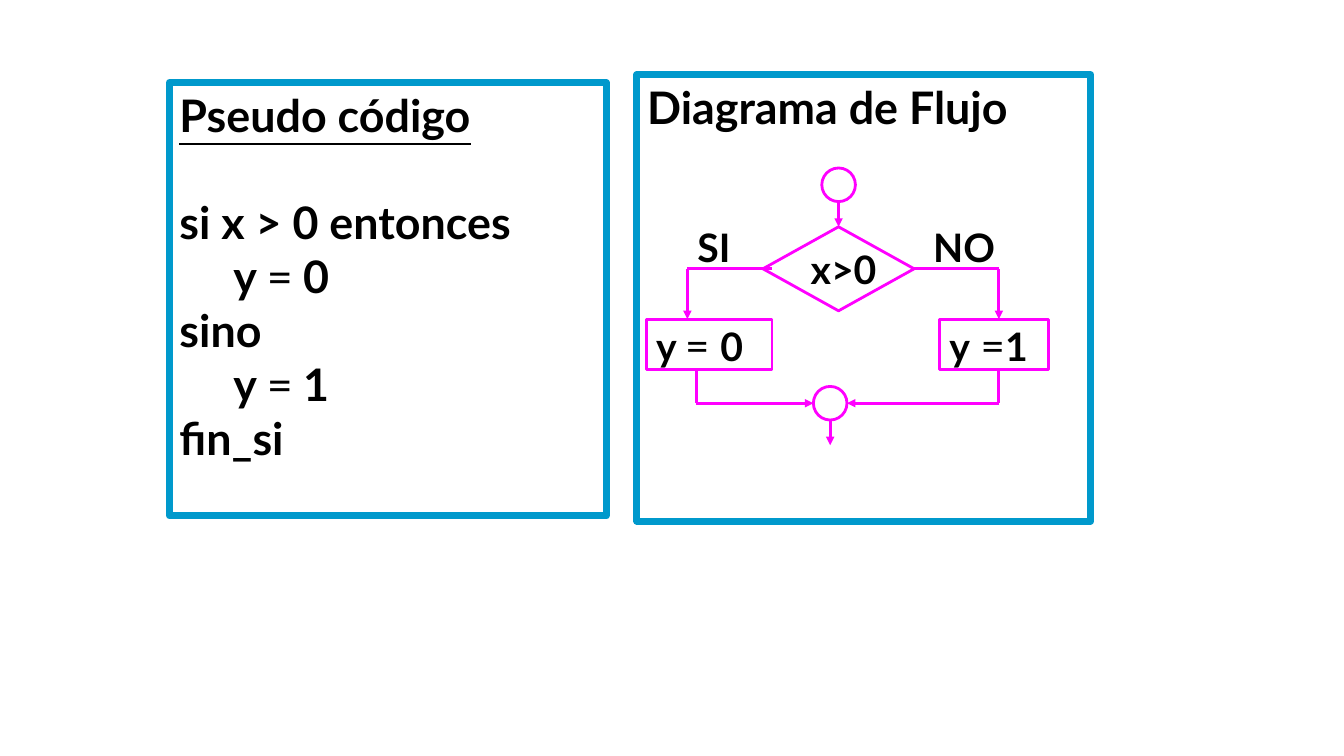
from lxml import etree
from pptx import Presentation
from pptx import util as u
from pptx.dml.color import RGBColor
from pptx.enum import shapes, text
from pptx.oxml.ns import qn

Kind = shapes.MSO_SHAPE


def paint(fmt, hue):
    if hue is None:
        fmt.background()
    else:
        fmt.solid()
        fmt.fore_color.rgb = RGBColor.from_string(hue)


def write(para, runs, size=28, font="Lato", hue="000000", under=False):
    if isinstance(runs, str):
        runs = [(runs,)]
    para.alignment = text.PP_ALIGN.LEFT
    para.line_spacing = 1.0
    para.space_before = u.Pt(0)
    for words, *rest in runs:
        run = para.add_run()
        run.text = words
        run.font.name = font
        run.font.size = u.Pt(rest[0] if rest else size)
        run.font.bold = rest[1] if len(rest) > 1 else True
        run.font.underline = under
        paint(run.font.fill, hue)


class Chart:
    ink = "FF00FF"
    edge = "0099CC"

    def __init__(self, slide):
        self.slide = slide

    def stroke(self, line, hue, width):
        paint(line.fill, hue)
        line.width = u.Pt(width)

    def frame(self, shape, anchor, wrap=True):
        frame = shape.text_frame
        frame.auto_size = text.MSO_AUTO_SIZE.NONE
        frame.vertical_anchor = anchor
        frame.word_wrap = wrap
        return frame

    def panel(self, holder, left, top, width, height):
        holder.left, holder.top = u.Pt(left), u.Pt(top)
        holder.width, holder.height = u.Pt(width), u.Pt(height)
        paint(holder.fill, None)
        self.stroke(holder.line, self.edge, 5)
        return self.frame(holder, text.MSO_ANCHOR.TOP)

    def node(self, kind, left, top, width, height, runs=None, wrap=True):
        shape = self.slide.shapes.add_shape(
            kind, u.Pt(left), u.Pt(top), u.Pt(width), u.Pt(height))
        shape.shadow.inherit = False
        paint(shape.fill, None)
        self.stroke(shape.line, self.ink, 2)
        if runs:
            frame = self.frame(shape, text.MSO_ANCHOR.MIDDLE, wrap)
            write(frame.paragraphs[0], runs)
        return shape

    def label(self, left, top, width, height, words):
        box = self.slide.shapes.add_textbox(
            u.Pt(left), u.Pt(top), u.Pt(width), u.Pt(height))
        frame = self.frame(box, text.MSO_ANCHOR.TOP)
        write(frame.paragraphs[0], words)

    def link(self, start, end, arrow=False):
        line = self.slide.shapes.add_connector(
            shapes.MSO_CONNECTOR.STRAIGHT, *map(u.Pt, start + end))
        self.stroke(line.line, self.ink, 2)
        props = line.line._get_or_add_ln()
        if arrow:
            etree.SubElement(props, qn("a:tailEnd"), type="triangle")
        etree.SubElement(props.getparent(), qn("a:effectLst"))
        return line

    def code(self, frame, rows):
        for i, (runs, inset, gap, under) in enumerate(rows):
            para = frame.paragraphs[0] if i == 0 else frame.add_paragraph()
            write(para, runs, size=32, under=under)
            para.space_before = u.Pt(gap)
            props = para._p.get_or_add_pPr()
            props.set("marL", str(u.Pt(inset)))
            props.set("indent", "0")
            etree.SubElement(props, qn("a:buNone"))


def main():
    deck = Presentation()
    deck.slide_width, deck.slide_height = u.Pt(960), u.Pt(540)
    slide = deck.slides.add_slide(deck.slide_layouts[1])
    flow = Chart(slide)

    title = flow.panel(slide.shapes.title, 455, 53.3, 324, 319)
    write(title.paragraphs[0], "Diagrama de Flujo", size=32)

    def assign(digit):
        return [("y ",), ("=", 32, False), (" ", 30), (digit,)]

    body = flow.panel(slide.placeholders[1], 121, 59, 312, 309.6)
    flow.code(body, [
        ("Pseudo código", 0, 0, True),
        ("si x > 0 entonces", 0, 38.4, False),
        (assign("0"), 38.5, 0, False),
        ("sino", 0, 0, False),
        (assign("1"), 38.5, 0, False),
        ("fin_si", 0, 0, False),
    ])

    test = flow.node(Kind.FLOWCHART_DECISION, 545, 162, 108, 60, "x>0", wrap=False)
    flow.node(Kind.RECTANGLE, 671, 228, 78, 36,
              [("y",), (" =", 30, False), ("1",)])
    flow.node(Kind.RECTANGLE, 461.5, 228, 90, 36,
              [("y ",), ("= ", 30, False), ("0",)])
    for left, top in ((587, 120), (581, 276)):
        flow.node(Kind.FLOWCHART_CONNECTOR, left, top, 24, 24)

    yes, out, no = 491, 497.5, 713.5
    fork, drop, base, join = 192, 228, 264, 288
    flow.link((yes, fork), (551.5, fork))
    flow.link((653, fork), (no, fork)).begin_connect(test, 3)
    for side in (yes, no):
        flow.link((side, fork), (side, drop), arrow=True)
    for side, rim in ((out, 581), (no, 605)):
        flow.link((side, base), (side, join))
        flow.link((side, join), (rim, join), arrow=True)
    flow.link((599, 144), (599, 162), arrow=True).end_connect(test, 0)
    flow.link((593, 300), (593, 318), arrow=True)

    for left, words in ((659.5, "NO"), (yes, "SI")):
        flow.label(left, 156, 60, 41, words)

    deck.save("out.pptx")


if __name__ == "__main__":
    main()
